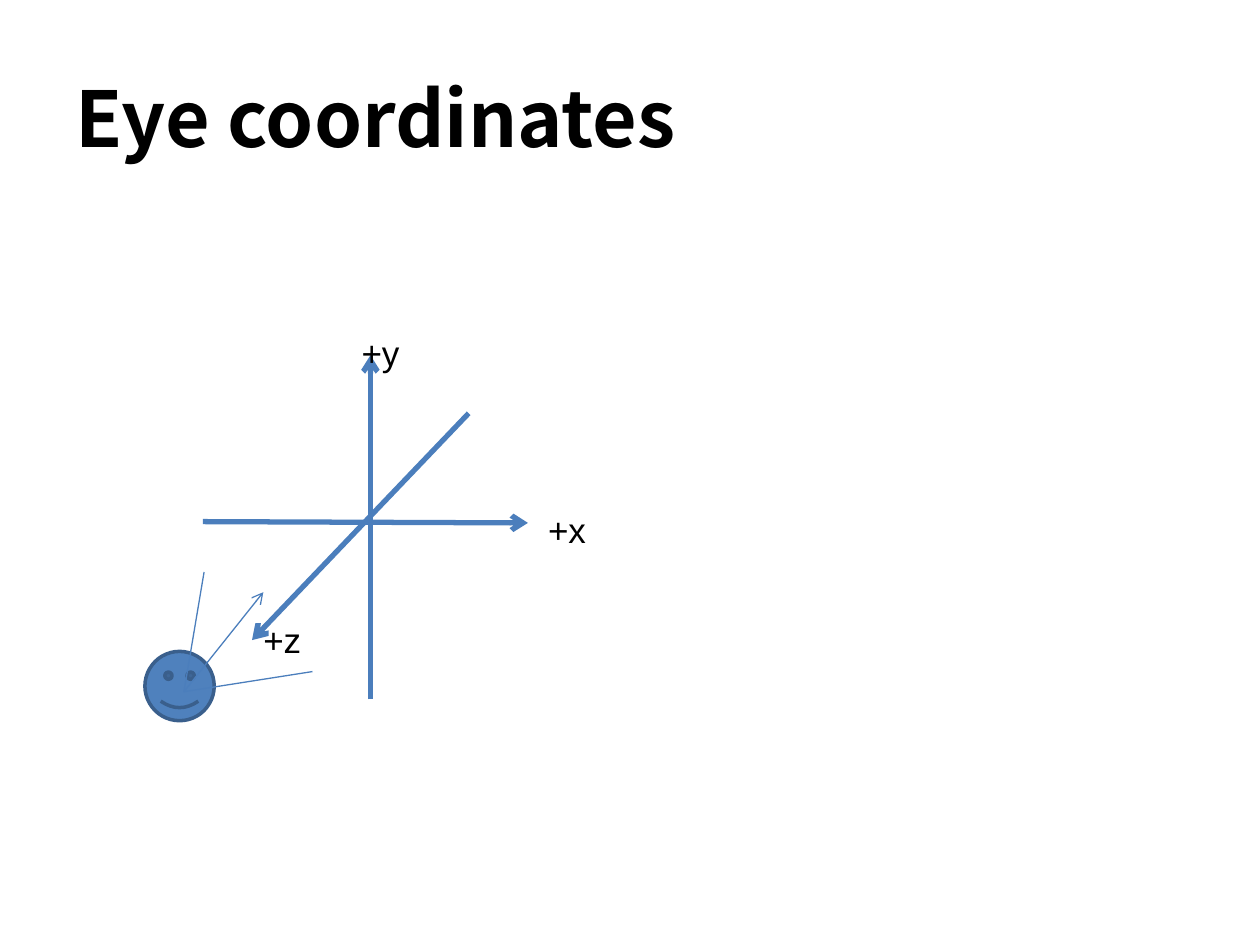
from lxml import etree
from pptx import Presentation
from pptx.dml.color import RGBColor
from pptx.enum.shapes import MSO_CONNECTOR, MSO_SHAPE
from pptx.enum.text import MSO_ANCHOR, PP_ALIGN
from pptx.oxml import parse_xml
from pptx.oxml.ns import nsdecls, qn
from pptx.util import Inches, Pt

LINE = "4B7EBC"


def color(value):
    """Turn a hex string into a colour."""
    return RGBColor.from_string(value)


def add_text(page, box, text, size, font, bold=False, align=PP_ALIGN.LEFT, anchor=MSO_ANCHOR.TOP):
    """Place one line of text in a box and return its run."""
    frame = page.shapes.add_textbox(*map(Inches, box)).text_frame
    frame.word_wrap = True
    frame.vertical_anchor = anchor
    frame.text = text
    para = frame.paragraphs[0]
    para.alignment = align
    span = para.runs[0]
    span.font.size = Pt(size)
    span.font.name = font
    span.font.bold = bold
    span.font.color.rgb = color("000000")
    return span


def add_line(shapes, start, end, width, arrow=False):
    """Draw a straight line, with an open arrowhead at its end if asked."""
    line = shapes.add_connector(MSO_CONNECTOR.STRAIGHT, *map(Inches, (*start, *end)))
    line.line.color.rgb = color(LINE)
    line.line.width = Pt(width)
    if arrow:
        etree.SubElement(line.line._get_or_add_ln(), qn("a:tailEnd"), type="arrow")
    etree.SubElement(line._element.spPr, qn("a:effectLst"))


def add_title(page, box, text):
    """Place the bold title with its soft text shadow."""
    span = add_text(page, box, text, 44, "Noto Sans CJK SC", bold=True, anchor=MSO_ANCHOR.MIDDLE)
    shadow = parse_xml(
        f'<a:effectLst {nsdecls("a")}><a:outerShdw blurRad="38100" dist="38100" dir="2700000">'
        '<a:srgbClr val="000000"><a:alpha val="43000"/></a:srgbClr></a:outerShdw></a:effectLst>'
    )
    span.font._element.find(qn("a:solidFill")).addnext(shadow)


def add_axes(page, box):
    """Draw the three labelled axes in a box."""
    left, top, width, height = box
    axes = [
        ("+x", (0, 1.32), (width, 1.33), (2.58, 1.17)),
        ("+y", (1.33, height), (1.33, 0), (1.1, -0.24)),
        ("+z", (2.11, 0.46), (0.39, 2.26), (0.32, 2.04)),
    ]
    for label, start, end, corner in axes:
        add_line(page.shapes, (left + start[0], top + start[1]), (left + end[0], top + end[1]), 3, True)
    for label, start, end, corner in axes:
        label_box = (left + corner[0], top + corner[1], 0.62, 0.44)
        add_text(page, label_box, label, 20, "Arial", align=PP_ALIGN.CENTER)


def add_viewer(page, box):
    """Draw the viewer's face at the lower left of a box, with its lines of sight."""
    left, top, width, height = box
    size = 0.55
    face = page.shapes.add_shape(
        MSO_SHAPE.SMILEY_FACE, *map(Inches, (left, top + height - size, size, size))
    )
    face.shadow.inherit = False
    face.fill.solid()
    face.fill.fore_color.rgb = color("4F81BD")
    face.line.color.rgb = color("3A5F8C")
    face.line.width = Pt(2)
    sight = page.shapes.add_group_shape()
    eye = (left + 0.31, top + 0.95)
    for x, y, arrow in [(0.94, 0.16, True), (width, 0.79, False), (0.47, 0, False)]:
        add_line(sight.shapes, eye, (left + x, top + y), 0.75, arrow)


def main():
    """Build the slide and save it."""
    deck = Presentation()
    deck.slide_width = Inches(10)
    deck.slide_height = Inches(7.5)
    page = deck.slides.add_slide(deck.slide_layouts[6])
    add_title(page, (0.5, 0.3, 7.18, 1.25), "Eye coordinates")
    add_axes(page, (1.61, 2.82, 2.58, 2.73))
    add_viewer(page, (1.15, 4.54, 1.33, 1.18))
    deck.save("out.pptx")


if __name__ == "__main__":
    main()
